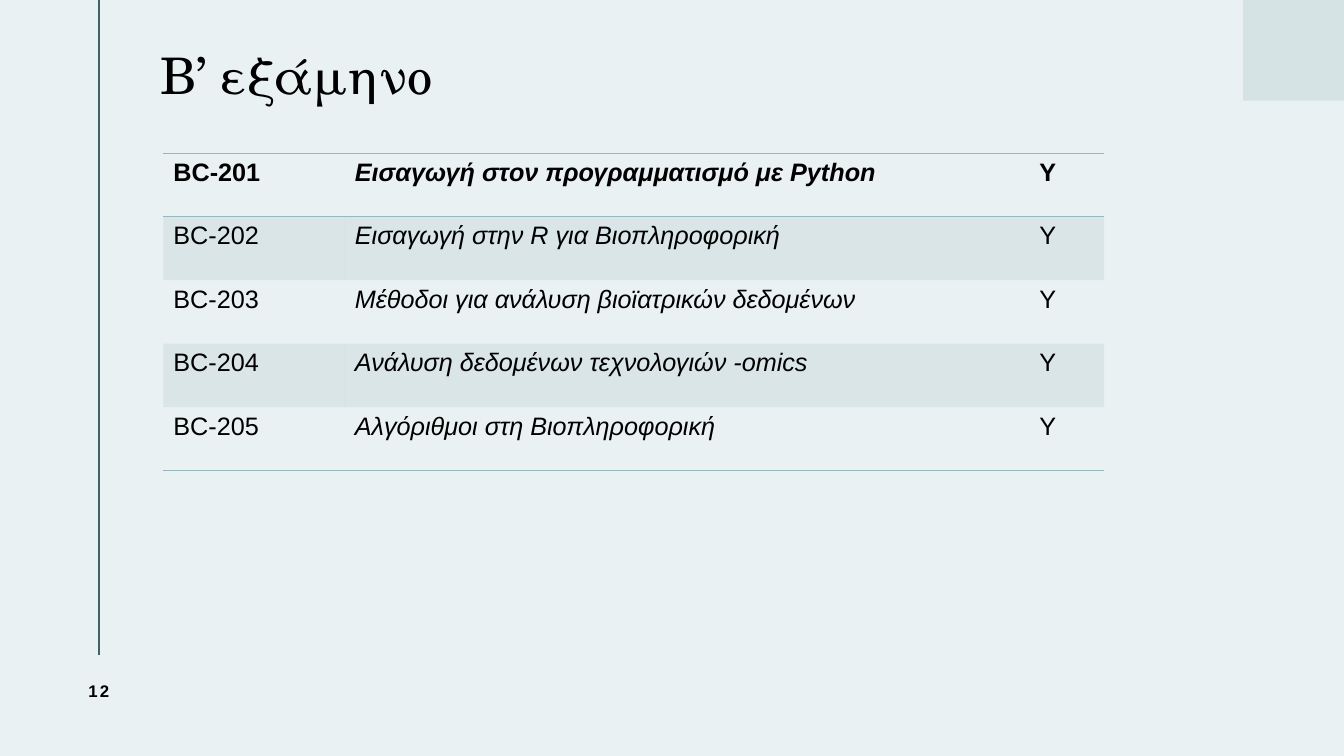
import pptx
import pptx.util
import pptx.dml.color
import pptx.enum.shapes
import pptx.enum.text
import pptx.oxml
import pptx.oxml.ns

Inches = pptx.util.Inches
Pt = pptx.util.Pt
RGBColor = pptx.dml.color.RGBColor
ANCHOR = pptx.enum.text.MSO_ANCHOR
ALIGN = pptx.enum.text.PP_ALIGN

PALE = RGBColor(0xEA, 0xF1, 0xF2)
MIST = RGBColor(0xD5, 0xE3, 0xE5)
TEAL = RGBColor(0x95, 0xB8, 0xBF)
DARK = RGBColor(0x40, 0x63, 0x6A)
BLACK = RGBColor(0, 0, 0)
NS = pptx.oxml.ns.nsdecls("a")


def style(run, size, face="Arial", **more):
    run.font.color.rgb = BLACK
    for key, value in {"size": Pt(size), "name": face, **more}.items():
        setattr(run.font, key, value)


def edge(cell, side, shown):
    paint = f'<a:solidFill><a:srgbClr val="{TEAL}"/></a:solidFill>' if shown else "<a:noFill/>"
    line = pptx.oxml.parse_xml(f'<a:ln{side} {NS} w="{Pt(1)}">{paint}</a:ln{side}>')
    cell._tc.get_or_add_tcPr().append(line)


deck = pptx.Presentation()
deck.slide_width, deck.slide_height = Inches(13.33), Inches(7.5)
slide = deck.slides.add_slide(deck.slide_layouts[5])
slide.background.fill.solid()
slide.background.fill.fore_color.rgb = PALE
shapes = slide.shapes

# Side rule and corner square
rule = shapes.add_connector(pptx.enum.shapes.MSO_CONNECTOR.STRAIGHT,
                            Inches(0.98), 0, Inches(0.98), Inches(6.5))
rule.line.color.rgb = DARK
rule.line.width = Pt(1.5)
rule._element.spPr.append(pptx.oxml.parse_xml(f"<a:effectLst {NS}/>"))

square = shapes.add_shape(pptx.enum.shapes.MSO_SHAPE.RECTANGLE,
                          Inches(12.33), 0, Inches(1), Inches(1))
square.shadow.inherit = False
square.fill.solid()
square.fill.fore_color.rgb = MIST
square.line.fill.background()

# Title
title = shapes.title
title.left, title.top = Inches(1.59), 0
title.width, title.height = Inches(10.01), Inches(1.56)
frame = title.text_frame
for key, value in {"margin_left": 0, "vertical_anchor": ANCHOR.MIDDLE, "word_wrap": True}.items():
    setattr(frame, key, value)
head = frame.paragraphs[0]
head.alignment = ALIGN.LEFT
head.line_spacing = 0.9
run = head.add_run()
run.text = "Β’ εξάμηνο"
style(run, 36, "TeX Gyre Schola")

# Course table
courses = [
    "Εισαγωγή στον προγραμματισμό με Python",
    "Εισαγωγή στην R για Βιοπληροφορική",
    "Μέθοδοι για ανάλυση βιοϊατρικών δεδομένων",
    "Ανάλυση δεδομένων τεχνολογιών -omics",
    "Αλγόριθμοι στη Βιοπληροφορική",
]
count = len(courses)
ruled = {0, 1, count}  # row edges that carry a line
table = shapes.add_table(count, 3, Inches(1.62), Inches(1.52),
                         Inches(9.33), Inches(0.63 * count)).table
table.first_row = table.horz_banding = False
for column, width in zip(table.columns, (1.8, 6.79, 0.74)):
    column.width = Inches(width)

for row, course in enumerate(courses):
    for col, text in enumerate((f"BC-{201 + row}", course, "Υ")):
        cell = table.cell(row, col)
        for side, shown in (("L", False), ("R", False),
                            ("T", row in ruled), ("B", row + 1 in ruled)):
            edge(cell, side, shown)
        if row % 2:
            cell.fill.solid()
            cell.fill.fore_color.rgb = TEAL
            tint = cell._tc.tcPr.find("./" + pptx.oxml.ns.qn("a:solidFill"))[0]
            tint.append(pptx.oxml.parse_xml(f'<a:alpha {NS} val="20000"/>'))
        else:
            cell.fill.background()
        run = cell.text_frame.paragraphs[0].add_run()
        run.text = text
        style(run, 18, bold=row == 0, italic=col == 1)

# Page number
box = shapes.add_textbox(Inches(0.45), Inches(6.5), Inches(1.06), Inches(0.71))
box.text_frame.word_wrap = True
box.text_frame.vertical_anchor = ANCHOR.MIDDLE
page = box.text_frame.paragraphs[0]
page.alignment = ALIGN.CENTER
run = page.add_run()
run.text = "12"
style(run, 12, bold=True)
run._r.get_or_add_rPr().set("spc", "150")

deck.save("out.pptx")
